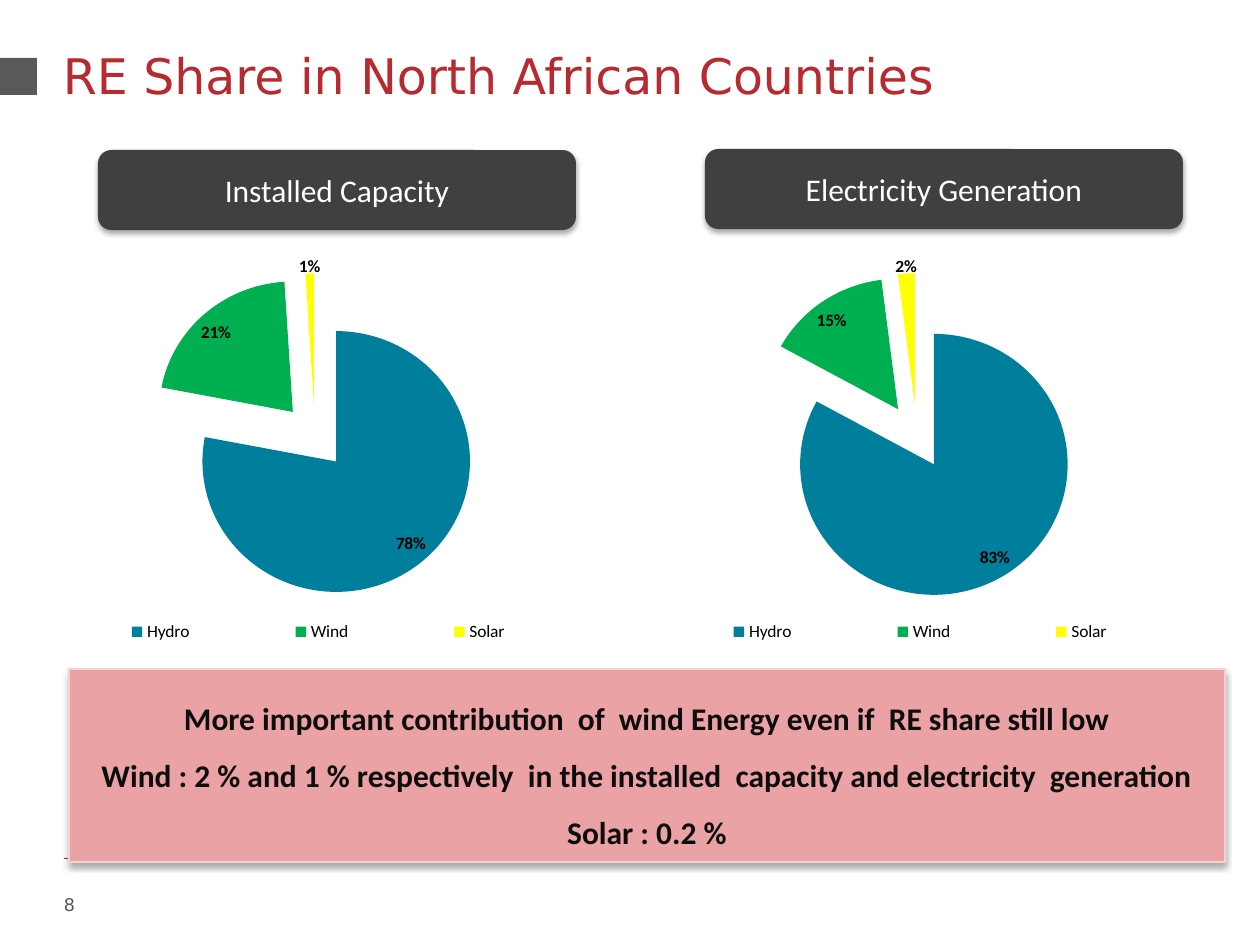
from lxml import etree
from pptx import Presentation
from pptx.chart.data import CategoryChartData
from pptx.dml.color import RGBColor
from pptx.enum.chart import XL_CHART_TYPE, XL_LABEL_POSITION, XL_LEGEND_POSITION
from pptx.enum.shapes import MSO_SHAPE as Preset
from pptx.enum.text import MSO_ANCHOR as Anchor, PP_ALIGN as Align
from pptx.oxml import parse_xml
from pptx.oxml.ns import nsdecls, qn
from pptx.util import Pt

PX = 914400 // 126
GREY = "595959"
ENERGY_COLORS = {"Hydro": "007F9C", "Wind": "00B050", "Solar": "FFFF00"}


def color(hex_code):
    return RGBColor.from_string(hex_code)


def scale(*lengths):
    return [length * PX for length in lengths]


def add_shadow(shape, alpha, blur, distance):
    """Drop a black shadow straight down; alpha in percent, lengths in points."""
    shape._element.spPr.append(parse_xml(
        f'<a:effectLst {nsdecls("a")}><a:outerShdw blurRad="{Pt(blur)}" '
        f'dist="{Pt(distance)}" dir="5400000" rotWithShape="0">'
        f'<a:srgbClr val="000000"><a:alpha val="{alpha * 1000}"/></a:srgbClr>'
        '</a:outerShdw></a:effectLst>'))


def add_block(page, preset, place, fill, line=None, shadow=None):
    block = page.shapes.add_shape(preset, *scale(*place))
    block.fill.solid()
    block.fill.fore_color.rgb = color(fill)
    if line:
        block.line.color.rgb = color(line)
        block.line.width = Pt(0.75)
    else:
        block.line.fill.background()
    if shadow:
        add_shadow(block, *shadow)
    else:
        block.shadow.inherit = False
    return block


def write_lines(shape, lines, size, font, ink, bold=False,
                align=Align.LEFT, anchor=Anchor.TOP, spacing=None):
    frame = shape.text_frame
    frame.word_wrap = True
    frame.vertical_anchor = anchor
    for index, line in enumerate(lines):
        para = frame.add_paragraph() if index else frame.paragraphs[0]
        para.alignment = align
        para.line_spacing = spacing
        span = para.add_run()
        span.text = line
        span.font.size = Pt(size)
        span.font.name = font
        span.font.bold = bold
        span.font.color.rgb = color(ink)


def add_plain_text(page, place, text, size, ink):
    box = page.shapes.add_textbox(*scale(*place))
    box.text_frame.margin_left = box.text_frame.margin_right = 0
    write_lines(box, [text], size, "DejaVu Sans", ink)


def add_heading(page, left, top, text):
    heading = add_block(page, Preset.ROUNDED_RECTANGLE, (left, top, 478, 80),
                        "404040", shadow=(35, 3.1, 1.8))
    write_lines(heading, [text], 18, "Calibri", "FFFFFF",
                align=Align.CENTER, anchor=Anchor.MIDDLE)


def manual_layout(x, y, width, height, inner=False):
    target = '<c:layoutTarget val="inner"/>' if inner else ""
    return parse_xml(
        f'<c:layout {nsdecls("c")}><c:manualLayout>{target}'
        '<c:xMode val="edge"/><c:yMode val="edge"/>'
        f'<c:x val="{x}"/><c:y val="{y}"/><c:w val="{width}"/><c:h val="{height}"/>'
        '</c:manualLayout></c:layout>')


def drop_layout(parent):
    for layout in parent.findall(qn("c:layout")):
        parent.remove(layout)


def add_share_pie(page, left, shares):
    data = CategoryChartData(number_format="0%")
    data.categories = list(ENERGY_COLORS)
    data.add_series("Series 1", shares)
    chart = page.shapes.add_chart(
        XL_CHART_TYPE.PIE, *scale(left, 247, 630, 413), data).chart
    chart.has_title = False
    chart.font.size = Pt(10)
    chart.font.name = "Calibri"
    chart.font.color.rgb = color("000000")

    chart.has_legend = True
    chart.legend.position = XL_LEGEND_POSITION.BOTTOM
    chart.legend.include_in_layout = False
    legend = chart.legend._element
    drop_layout(legend)
    legend.find(qn("c:legendPos")).addnext(manual_layout(0.05, 0.88, 0.91, 0.1))
    plot_area = chart._chartSpace.chart.plotArea
    drop_layout(plot_area)
    plot_area.insert(0, manual_layout(0.01, 0.04, 0.98, 0.81, inner=True))

    plot = chart.plots[0]
    series = plot.series[0]
    explosion = etree.Element(qn("c:explosion"), val="25")
    series._element.find(qn("c:tx")).addnext(explosion)
    for index, fill in enumerate(ENERGY_COLORS.values()):
        wedge = series.points[index].format
        wedge.fill.solid()
        wedge.fill.fore_color.rgb = color(fill)
        wedge.line.fill.background()

    labels = series.data_labels
    labels.show_value = True
    labels.show_percentage = False
    labels.number_format = "0%"
    labels.number_format_is_linked = False
    labels.position = XL_LABEL_POSITION.BEST_FIT
    labels.font.bold = True
    labels.font.size = Pt(10)
    labels.font.name = "Calibri"
    labels.font.color.rgb = color("000000")


def add_conclusion(page, lines):
    panel = add_block(page, Preset.RECTANGLE, (69, 669, 1156, 193), "EAA2A5",
                      line="F4D1D2", shadow=(32, 3.5, 2.2))
    write_lines(panel, lines, 18, "Calibri", "0D0D0D", bold=True,
                align=Align.CENTER, anchor=Anchor.MIDDLE, spacing=1.5)


def main():
    deck = Presentation()
    deck.slide_width, deck.slide_height = scale(1260, 945)
    page = deck.slides.add_slide(deck.slide_layouts[6])

    add_block(page, Preset.RECTANGLE, (0, 58, 37, 37), GREY)
    add_block(page, Preset.RECTANGLE, (64, 858, 1133, 1), GREY)
    add_plain_text(page, (64, 888, 294, 66), "8", 10, GREY)
    add_plain_text(page, (63, 39, 1134, 122),
                   "RE Share in North African Countries", 28, "B72A2F")
    add_heading(page, 98, 150, "Installed Capacity")
    add_heading(page, 705, 149, "Electricity Generation")
    add_conclusion(page, [
        "More important contribution  of  wind Energy even if  RE share still low",
        "Wind : 2 % and 1 % respectively  in the installed  capacity and electricity  generation",
        "Solar : 0.2 %",
    ])
    add_share_pie(page, 0, (0.78, 0.21, 0.01))
    add_share_pie(page, 602, (0.83, 0.15, 0.02))
    deck.save("out.pptx")


if __name__ == "__main__":
    main()
